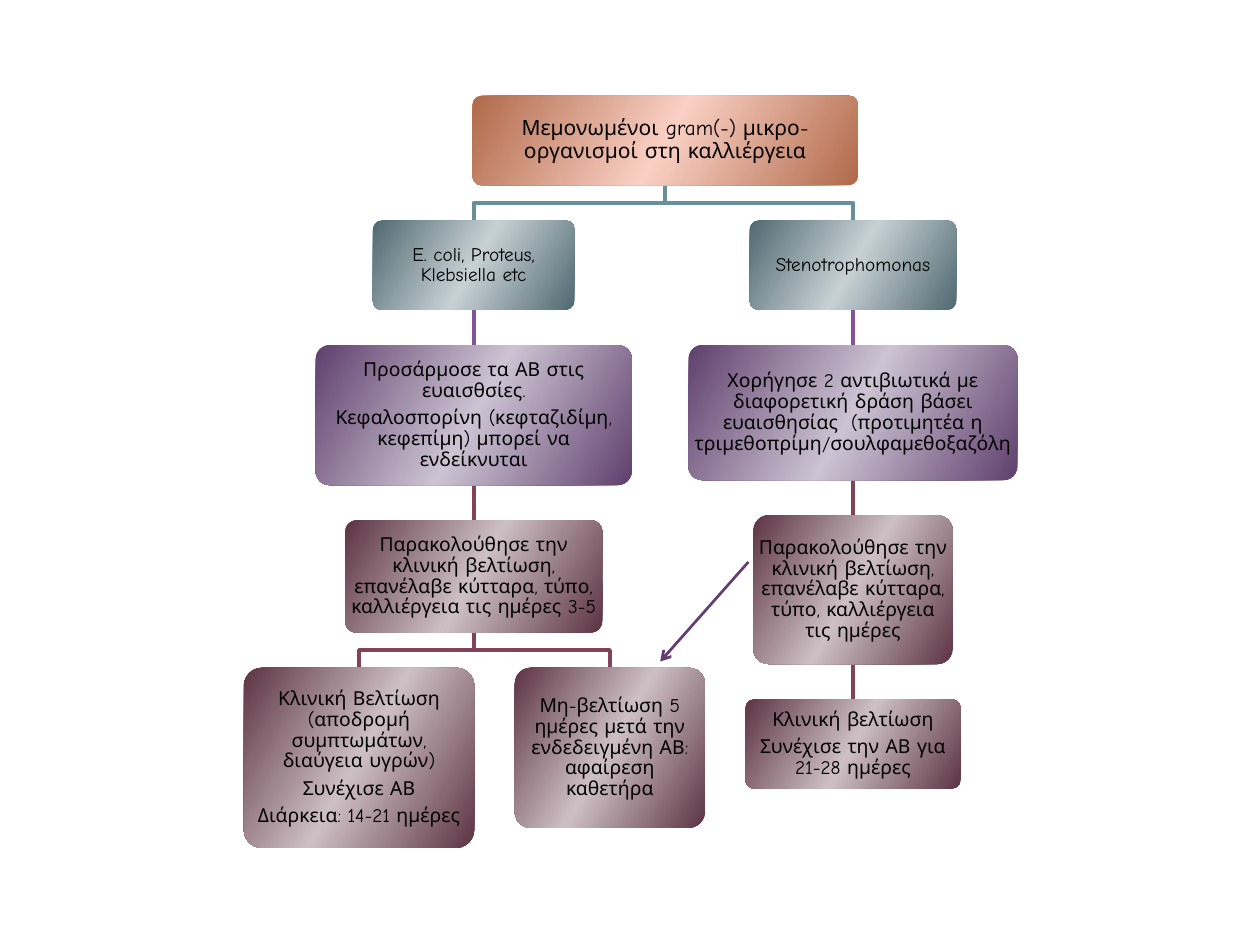
from copy import deepcopy
from dataclasses import dataclass

from lxml import etree
from pptx import Presentation
from pptx.dml.color import RGBColor
from pptx.enum.shapes import MSO_CONNECTOR, MSO_SHAPE
from pptx.enum.text import MSO_ANCHOR, PP_ALIGN
from pptx.oxml.ns import qn
from pptx.util import Inches, Pt

ROUNDED = MSO_SHAPE.ROUNDED_RECTANGLE
STRAIGHT = MSO_CONNECTOR.STRAIGHT
MIDDLE = MSO_ANCHOR.MIDDLE
CENTER = PP_ALIGN.CENTER

FONT = "Comic Neue"
GAP = 0.28
TREE_TOP = 0.76
LEFT_X, RIGHT_X = 3.76, 6.77
ROUNDING = 0.1
TEXT_INSET = 0.04


@dataclass(frozen=True)
class Palette:
    edge: str
    middle: str
    link: str


@dataclass(frozen=True)
class Node:
    center: float
    width: float
    height: float
    palette: Palette
    paragraphs: tuple[str, ...]
    children: tuple["Node", ...] = ()
    size: float = 11


COPPER = Palette("B06A4A", "FAD0C4", "B06A4A")
TEAL = Palette("506971", "C7D1D5", "698F9B")
PURPLE = Palette("5F406D", "CDC3D3", "825397")
WINE = Palette("5D3443", "CDC0C4", "814359")

IMPROVED = Node(2.85, 1.83, 1.43, WINE, (
    "Κλινική Βελτίωση (αποδρομή συμπτωμάτων, διαύγεια υγρών)",
    "Συνέχισε ΑΒ",
    "Διάρκεια: 14-21 ημέρες"))
NOT_IMPROVED = Node(4.84, 1.51, 1.27, WINE, (
    "Μη-βελτίωση 5 ημέρες μετά την ενδεδειγμένη ΑΒ: αφαίρεση καθετήρα",))
FOLLOW_UP = Node(LEFT_X, 2.04, 0.89, WINE, (
    "Παρακολούθησε την κλινική βελτίωση, επανέλαβε κύτταρα, τύπο, "
    "καλλιέργεια τις ημέρες 3-5",), (IMPROVED, NOT_IMPROVED))
ADJUST = Node(LEFT_X, 2.51, 1.11, PURPLE, (
    "Προσάρμοσε τα ΑΒ στις ευαισθσίες.",
    "Κεφαλοσπορίνη (κεφταζιδίμη, κεφεπίμη) μπορεί να ενδείκνυται"),
    (FOLLOW_UP,))
ENTERIC = Node(LEFT_X, 1.6, 0.71, TEAL,
               ("E. coli, Proteus, Klebsiella etc",), (ADJUST,))

STENO_IMPROVED = Node(RIGHT_X, 1.71, 0.71, WINE, (
    "Κλινική βελτίωση", "Συνέχισε την ΑΒ για 21-28 ημέρες"))
STENO_FOLLOW_UP = Node(RIGHT_X, 1.58, 1.18, WINE, (
    "Παρακολούθησε την κλινική βελτίωση, επανέλαβε κύτταρα, τύπο, "
    "καλλιέργεια τις ημέρες",), (STENO_IMPROVED,))
TWO_DRUGS = Node(RIGHT_X, 2.61, 1.07, PURPLE, (
    "Χορήγησε 2 αντιβιωτικά με διαφορετική δράση βάσει ευαισθησίας  "
    "(προτιμητέα η τριμεθοπρίμη/σουλφαμεθοξαζόλη",), (STENO_FOLLOW_UP,))
STENO = Node(RIGHT_X, 1.64, 0.71, TEAL, ("Stenotrophomonas",), (TWO_DRUGS,))

ROOT = Node(5.28, 3.06, 0.71, COPPER,
            ("Μεμονωμένοι gram(-) μικρο-οργανισμοί στη καλλιέργεια",),
            (ENTERIC, STENO), size=12)


def rgb(value: str) -> RGBColor:
    return RGBColor.from_string(value)


def fill_gradient(sp, palette: Palette) -> None:
    """Fill with a slanted edge-middle-edge gradient."""
    sp.fill.gradient()
    sp.fill.gradient_angle = 330  # counter-clockwise, so 30 degrees downwards
    stops = sp._element.spPr.find(qn("a:gradFill")).find(qn("a:gsLst"))
    stops.append(deepcopy(stops[0]))
    colors = (palette.edge, palette.middle, palette.edge)
    for stop, color, position in zip(sp.fill.gradient_stops, colors, (0, 0.5, 1)):
        stop.color.rgb = rgb(color)
        stop.position = position


def write_text(tf, paragraphs: tuple[str, ...], *, size: float, margin: float,
               color: str = "000000") -> None:
    tf.word_wrap = True
    tf.vertical_anchor = MIDDLE
    tf.margin_left = tf.margin_right = Inches(margin)
    tf.margin_top = tf.margin_bottom = Inches(margin)
    for i, text in enumerate(paragraphs):
        p = tf.paragraphs[0] if i == 0 else tf.add_paragraph()
        p.alignment = CENTER
        p.line_spacing = 0.9
        p.space_after = Pt(size * 0.35)
        r = p.add_run()
        r.text = text
        r.font.name = FONT
        r.font.size = Pt(size)
        r.font.color.rgb = rgb(color)


def draw_line(shapes, start: tuple[float, float], end: tuple[float, float],
              color: str, width: float):
    line = shapes.add_connector(STRAIGHT, *map(Inches, start + end))
    line.line.color.rgb = rgb(color)
    line.line.width = Pt(width)
    etree.SubElement(line._element.spPr, qn("a:effectLst"))
    return line


def draw_link(shapes, x1: float, y1: float, x2: float, color: str) -> None:
    """Join a parent's bottom to a child's top, with a bend if they are offset."""
    y2 = y1 + GAP
    if x1 == x2:
        draw_line(shapes, (x1, y1), (x2, y2), color, 2.36)
        return
    middle = y1 + GAP / 2
    builder = shapes.build_freeform(Inches(x1), Inches(y1))
    bends = ((x1, middle), (x2, middle), (x2, y2))
    builder.add_line_segments([(Inches(x), Inches(y)) for x, y in bends],
                              close=False)
    sp = builder.convert_to_shape()
    sp.shadow.inherit = False
    sp.fill.background()
    sp.line.color.rgb = rgb(color)
    sp.line.width = Pt(2.36)


def draw_tree(shapes, node: Node, top: float) -> None:
    bottom = top + node.height
    for child in node.children:
        draw_link(shapes, node.center, bottom, child.center, child.palette.link)
        draw_tree(shapes, child, bottom + GAP)
    sp = shapes.add_shape(ROUNDED, Inches(node.center - node.width / 2),
                          Inches(top), Inches(node.width), Inches(node.height))
    sp.adjustments[0] = ROUNDING
    sp.shadow.inherit = False
    sp.line.fill.background()
    fill_gradient(sp, node.palette)
    # Rounded corners already inset the text by 0.29 of their radius.
    corner_inset = 0.29 * ROUNDING * min(node.width, node.height)
    write_text(sp.text_frame, node.paragraphs, size=node.size,
               margin=max(0, TEXT_INSET - corner_inset))


def main() -> None:
    prs = Presentation()
    prs.slide_width, prs.slide_height = Inches(10), Inches(7.5)
    shapes = prs.slides.add_slide(prs.slide_layouts[6]).shapes
    draw_tree(shapes, ROOT, TREE_TOP)
    arrow = draw_line(shapes, (5.94, 4.46), (5.24, 5.25), "623E71", 1.57)
    etree.SubElement(arrow.line._get_or_add_ln(), qn("a:tailEnd"), type="arrow")
    prs.save("out.pptx")


if __name__ == "__main__":
    main()
